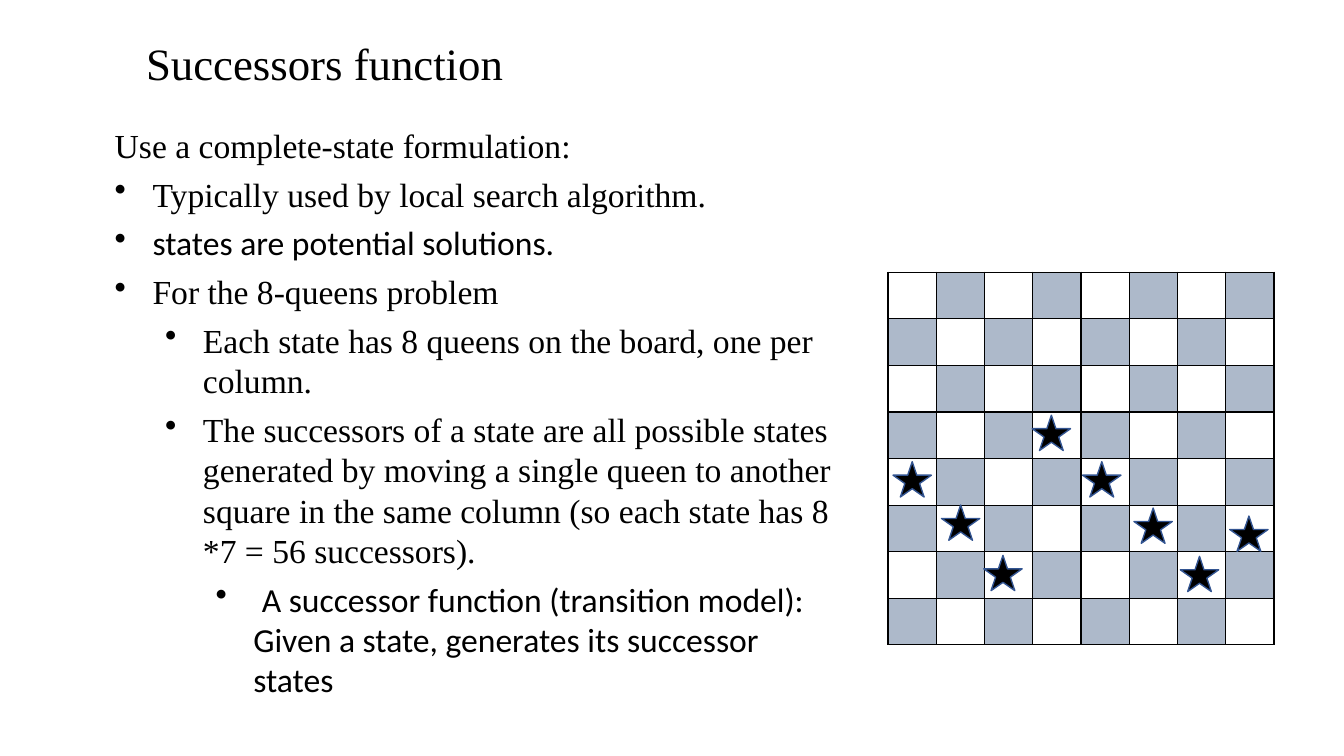
from itertools import product

from lxml.etree import SubElement
from pptx import Presentation
from pptx.dml.color import RGBColor
from pptx.enum.shapes import MSO_AUTO_SHAPE_TYPE as Shape
from pptx.enum.text import MSO_AUTO_SIZE as AutoSize
from pptx.oxml.ns import qn
from pptx.util import Pt

SERIF, SANS = "Times New Roman", "Calibri"
BLACK, WHITE, SLATE, NAVY = "000000", "FFFFFF", "ADB9CA", "325491"
SQUARES = 8

POINTS = [
    (None, [("Use a complete-state formulation:", SERIF)]),
    (0, [("Typically used by local search algorithm.", SERIF)]),
    (0, [("states are potential solutions.", SANS)]),
    (0, [("For the 8-queens problem", SERIF)]),
    (1, [("Each state has 8 queens on the board, one per column.", SERIF)]),
    (1, [("The successors of a state are all possible states generated by moving "
          "a single queen to another square in the same column "
          "(so each state has 8 *7 = 56 successors).", SERIF)]),
    (2, [(" ", SERIF),
         ("A successor function (transition model): Given a state, "
          "generates its successor states", SANS)]),
]

QUEENS = [(637.9, 329.8), (672.5, 360.7), (702.7, 396.7), (737.3, 296.6),
          (773.3, 329.8), (810, 362.9), (843.1, 397.4), (878.4, 368.6)]


def color(code):
    return RGBColor.from_string(code)


class SlideBuilder:
    """Draws styled elements on the current slide."""

    def __init__(self, page):
        self.page = page
        self.text_color = BLACK
        self.line_width = Pt(1)

    def text(self, left, top, width, height, points, size, after=0):
        box = self.page.shapes.add_textbox(Pt(left), Pt(top), Pt(width), Pt(height))
        frame = box.text_frame
        frame.word_wrap = True
        frame.auto_size = AutoSize.SHAPE_TO_FIT_TEXT
        for index, (level, spans) in enumerate(points):
            para = frame.paragraphs[0] if index == 0 else frame.add_paragraph()
            para.space_after = Pt(after)
            if level is not None:
                self.bullet(para, level)
            for words, face in spans:
                span = para.add_run()
                span.text = words
                for name, value in {"name": face, "size": Pt(size)}.items():
                    setattr(span.font, name, value)
                span.font.color.rgb = color(self.text_color)

    def bullet(self, para, level):
        para.level = level
        props = para._p.get_or_add_pPr()
        props.set("marL", str(Pt(27 + 36 * level)))
        props.set("indent", str(-Pt(27)))
        SubElement(props, qn("a:buChar"), char="•")

    def board(self, left, top, width, height):
        table = self.page.shapes.add_table(
            SQUARES, SQUARES, Pt(left), Pt(top), Pt(width), Pt(height)).table
        table.first_row = table.horz_banding = False
        for column in table.columns:
            column.width = Pt(width / SQUARES)
        for row in table.rows:
            row.height = Pt(height / SQUARES)
        for row, column in product(range(SQUARES), repeat=2):
            cell = table.cell(row, column)
            self.borders(cell)
            cell.fill.solid()
            cell.fill.fore_color.rgb = color(SLATE if (row + column) % 2 else WHITE)

    def borders(self, cell):
        props = cell._tc.get_or_add_tcPr()
        for side in ("lnL", "lnR", "lnT", "lnB"):
            line = SubElement(props, qn(f"a:{side}"), w=str(self.line_width))
            fill = SubElement(line, qn("a:solidFill"))
            SubElement(fill, qn("a:srgbClr"), val=BLACK)

    def queen(self, left, top):
        star = self.page.shapes.add_shape(
            Shape.STAR_5_POINT, Pt(left), Pt(top), Pt(27.4), Pt(25.2))
        star.shadow.inherit = False
        star.fill.solid()
        star.fill.fore_color.rgb = color(BLACK)
        star.line.color.rgb = color(NAVY)
        star.line.width = self.line_width


def main():
    deck = Presentation()
    deck.slide_width, deck.slide_height = Pt(960), Pt(540)
    builder = SlideBuilder(deck.slides.add_slide(deck.slide_layouts[6]))
    builder.text(74.9, 85.7, 528.5, 421.9, POINTS, 24, after=6)
    builder.board(634.3, 194.4, 275.8, 266.4)
    for left, top in QUEENS:
        builder.queen(left, top)
    builder.text(97.2, 22.3, 310.3, 46.1,
                 [(None, [("Successors function", SERIF)])], 32)
    deck.save("out.pptx")


if __name__ == "__main__":
    main()
